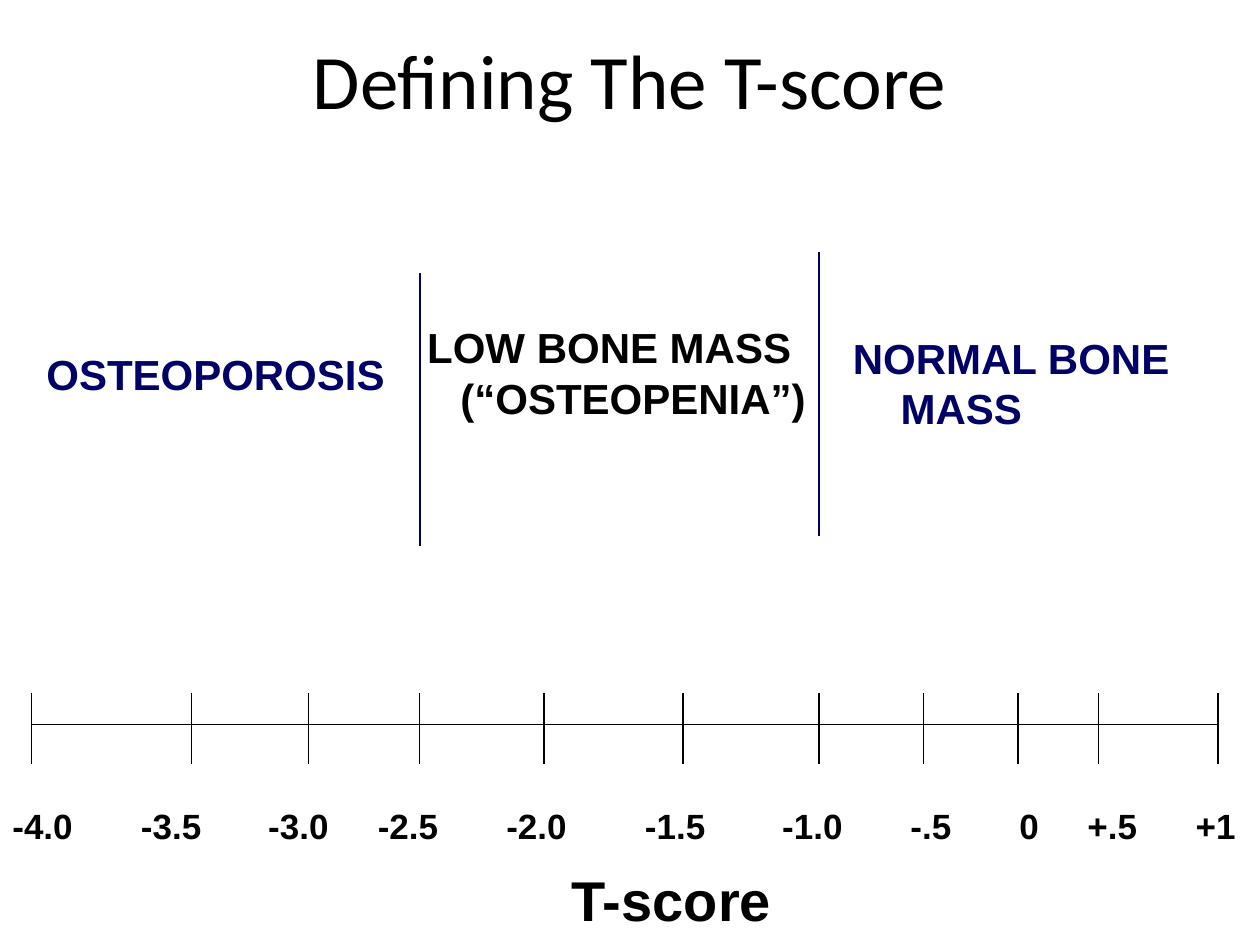
from itertools import pairwise
from lxml.etree import SubElement
from pptx import Presentation
from pptx.dml.color import RGBColor
from pptx.enum.shapes import MSO_CONNECTOR
from pptx.enum.text import MSO_ANCHOR, PP_ALIGN
from pptx.oxml.ns import qn
from pptx.util import Emu, Inches, Pt

BLACK = RGBColor(0, 0, 0)
NAVY = RGBColor(0, 0, 0x66)

# Content: each score with its tick position and label centre, in inches
SCALE = [
    ("-4.0", 0.25, 0.34), ("-3.5", 1.52, 1.36), ("-3.0", 2.45, 2.37),
    ("-2.5", 3.33, 3.24), ("-2.0", 4.32, 4.26), ("-1.5", 5.42, 5.36),
    ("-1.0", 6.5, 6.45), ("-.5", 7.33, 7.39), ("0", 8.08, 8.17),
    ("+.5", 8.72, 8.83), ("+1", 9.67, 9.65),
]
HANGING = 0.38
INSET = 0.1
CATEGORIES = [
    ("OSTEOPOROSIS", (0.27, 2.66, 3.03, 0.61), dict(color=NAVY)),
    ("LOW BONE MASS (“OSTEOPENIA”)", (3.17, 2.5, 3.33, 0.91),
     dict(align=PP_ALIGN.CENTER, hanging=HANGING)),
    ("NORMAL BONE MASS", (6.67, 2.58, 2.83, 0.91),
     dict(color=NAVY, hanging=HANGING)),
]
DIVIDERS = [(10 / 3, 2.17, 4.33), (6.5, 2, 4.25)]  # x, top, bottom
ROWS = (0.25, 0.31)


def add_text(page, text, place, size=24, color=BLACK, align=PP_ALIGN.LEFT,
             hanging=0, tabs=()):
    box = page.shapes.add_textbox(*map(Inches, place))
    frame = box.text_frame
    frame.word_wrap = True
    frame.vertical_anchor = MSO_ANCHOR.MIDDLE
    para = frame.paragraphs[0]
    para.text = text
    para.alignment = align
    properties = para._p.get_or_add_pPr()
    if hanging:
        properties.set("marL", str(Inches(hanging)))
        properties.set("indent", str(-Inches(hanging)))
    if tabs:
        stops = SubElement(properties, qn("a:tabLst"))
        for position in tabs:
            SubElement(stops, qn("a:tab"), pos=str(Inches(position)), algn="ctr")
    font = para.runs[0].font
    font.name, font.size, font.bold = "Arial", Pt(size), True
    font.color.rgb = color


def set_borders(cell, drawn):
    """Draw the named sides in black and leave the others without a line."""
    properties = cell._tc.get_or_add_tcPr()
    for place, side in enumerate(("lnL", "lnR", "lnT", "lnB")):
        line = SubElement(properties, qn("a:" + side), w=str(Pt(1)))
        properties.insert(place, line)
        if side in drawn:
            fill = SubElement(line, qn("a:solidFill"))
            SubElement(fill, qn("a:srgbClr"), val=str(BLACK))
        else:
            SubElement(line, qn("a:noFill"))


def add_scale(page):
    ticks = [tick for _, tick, _ in SCALE]
    widths = [right - left for left, right in pairwise(ticks)]
    frame = page.shapes.add_table(
        len(ROWS), len(widths), Inches(ticks[0]), Inches(5.5),
        Inches(sum(widths)), Inches(sum(ROWS)))
    table = frame.table
    table.first_row = table.horz_banding = False
    for column, width in zip(table.columns, widths):
        column.width = Inches(width)
    for row, height, across in zip(table.rows, ROWS, ("lnB", "lnT")):
        row.height = Inches(height)
        for cell in row.cells:
            cell.fill.background()
            cell.margin_top = cell.margin_bottom = Emu(0)
            SubElement(cell.text_frame.paragraphs[0]._p,
                       qn("a:endParaRPr"), sz="800")
            set_borders(cell, ("lnL", "lnR", across))


def main():
    deck = Presentation()
    deck.slide_width, deck.slide_height = Inches(10), Inches(7.5)
    page = deck.slides.add_slide(deck.slide_layouts[5])

    # Title
    title = page.shapes.title
    title.left, title.top, title.width, title.height = map(
        Inches, (0.5, 0, 9, 1.25))
    title.text_frame.text = "Defining The T-score"
    para = title.text_frame.paragraphs[0]
    para.alignment = PP_ALIGN.CENTER
    font = para.runs[0].font
    font.name, font.size, font.color.rgb = "Calibri", Pt(44), BLACK

    # Score axis with its ticks
    add_scale(page)

    # Diagnostic categories and the lines between them
    for text, place, style in CATEGORIES:
        add_text(page, text, place, **style)
    for x, top, bottom in DIVIDERS:
        line = page.shapes.add_connector(
            MSO_CONNECTOR.STRAIGHT, Inches(x), Inches(top), Inches(x), Inches(bottom))
        line.line.color.rgb, line.line.width = NAVY, Pt(0.75)
        SubElement(line._element.spPr, qn("a:effectLst"))

    # Axis labels and axis name
    add_text(page, "\t".join(label for label, _, _ in SCALE),
             (0, 6.33, 10, 0.44), size=20,
             tabs=[centre - INSET for _, _, centre in SCALE[1:]])
    add_text(page, "T-score", (4.23, 6.77, 2.2, 0.73), size=32,
             align=PP_ALIGN.CENTER)

    deck.save("out.pptx")


if __name__ == "__main__":
    main()
